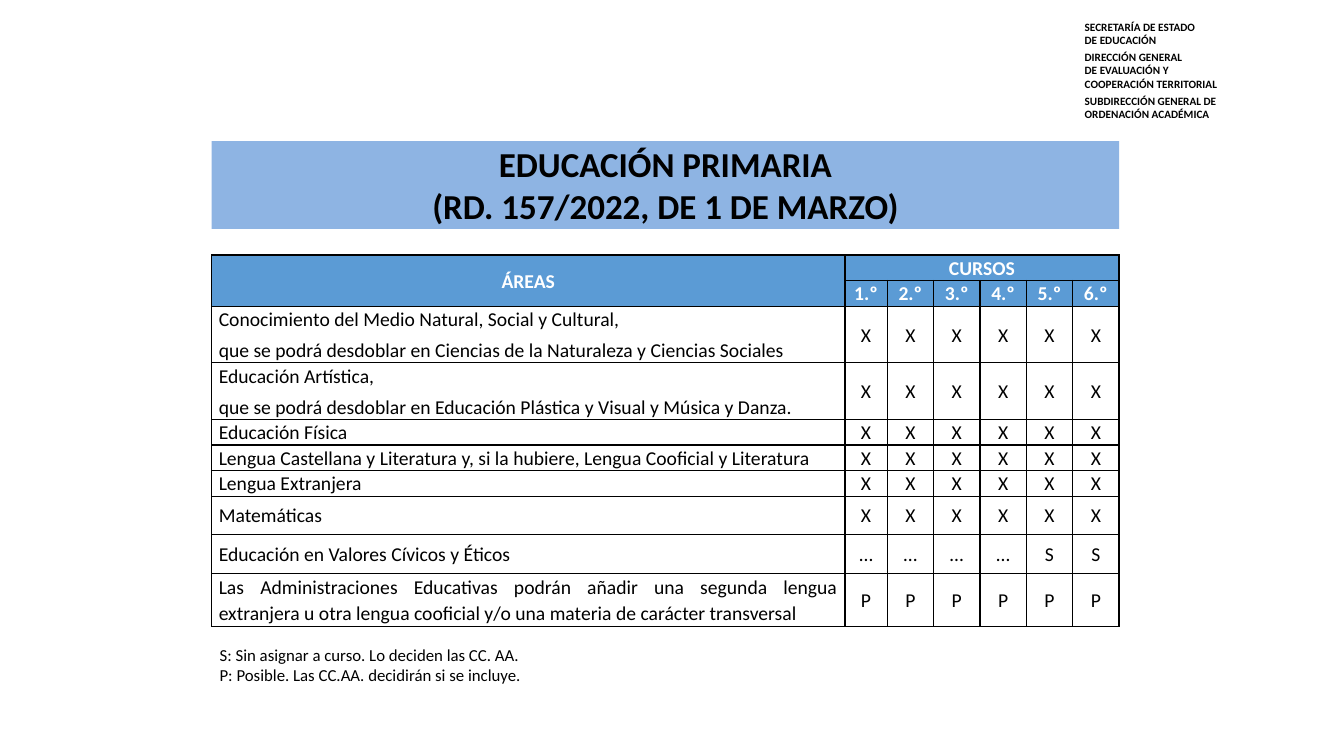
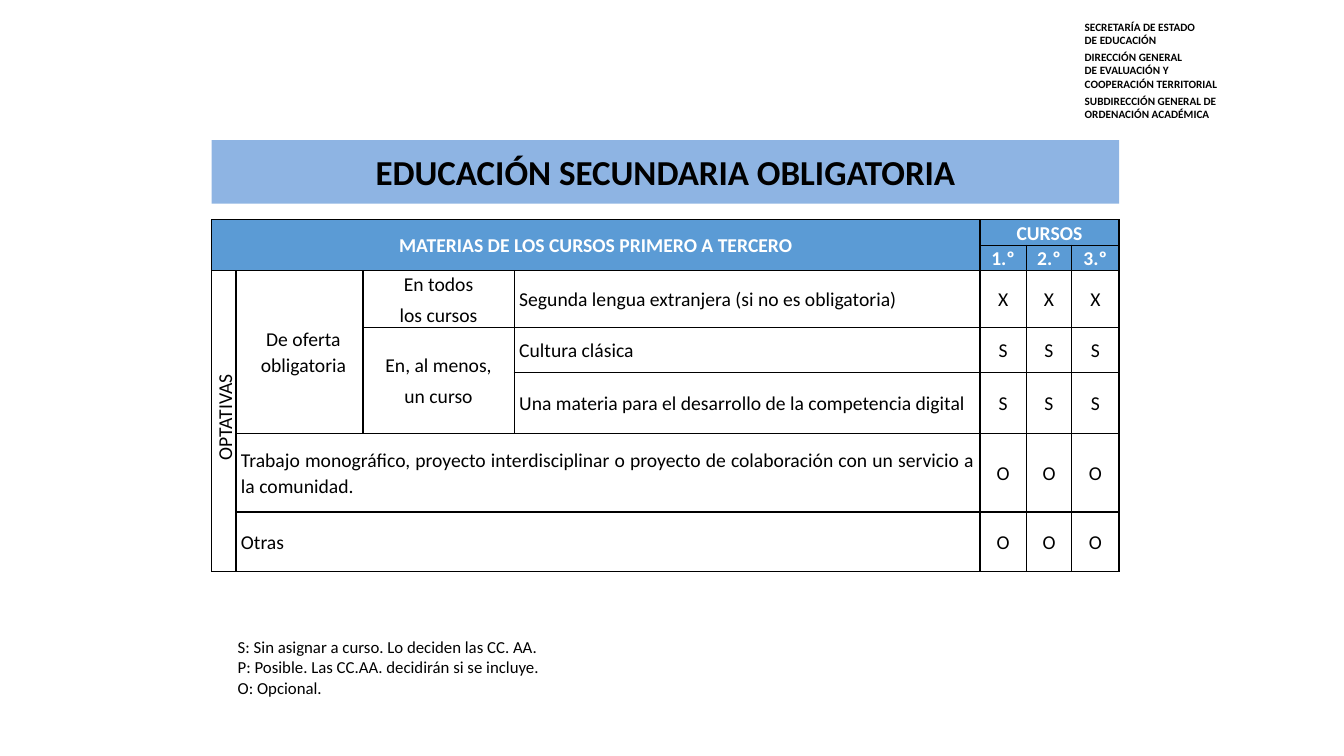
"""Build two slides on the areas and subjects of compulsory schooling."""
from dataclasses import dataclass
from typing import NamedTuple

from lxml import etree
from pptx import Presentation
from pptx import util as u
from pptx.dml import color
from pptx.enum import text
from pptx.oxml import ns

CENTER = text.PP_ALIGN.CENTER
JUSTIFY = text.PP_ALIGN.JUSTIFY
LEFT = text.PP_ALIGN.LEFT


@dataclass(frozen=True)
class Theme:
    font: str = "Calibri"
    ink: str = "000000"
    paper: str = "FFFFFF"
    band: str = "8EB4E3"
    header: str = "5B9BD5"
    title_size: float = 25
    table_size: float = 14
    legend_size: float = 12
    office_size: float = 8
    border_width: float = 1
    line_spacing: float = 1.07
    space_after: float = 4
    office_gap: float = 2.4


THEME = Theme()
TABLE_LEFT, TABLE_WIDTH = 2.1, 9
HEADER_ROWS = 2
OFFICES = (
    ("SECRETARÍA DE ESTADO", "DE EDUCACIÓN"),
    ("DIRECCIÓN GENERAL", "DE EVALUACIÓN Y", "COOPERACIÓN TERRITORIAL"),
    ("SUBDIRECCIÓN GENERAL DE ORDENACIÓN ACADÉMICA",),
)
LEGEND = (
    "S: Sin asignar a curso. Lo deciden las CC. AA.",
    "P: Posible. Las CC.AA. decidirán si se incluye.",
    "O: Opcional.",
)


class Box(NamedTuple):
    left: float
    top: float
    width: float
    height: float


class Label(NamedTuple):
    row: int
    column: int
    words: str
    rows: int = 1
    columns: int = 1
    align: text.PP_ALIGN = JUSTIFY
    indent: float = 0
    vertical: bool = False


@dataclass(frozen=True)
class Stage:
    title: str
    title_box: Box
    table_top: float
    widths: tuple[float, ...]
    heights: tuple[float, ...]
    inset: float
    heading: str
    labels: tuple[Label, ...]
    marks: tuple[str, ...]
    legend: tuple[str, ...]
    legend_box: Box


PRIMARY_AREAS = (
    "Conocimiento del Medio Natural, Social y Cultural,\n"
    "que se podrá desdoblar en Ciencias de la Naturaleza y Ciencias Sociales",
    "Educación Artística,\n"
    "que se podrá desdoblar en Educación Plástica y Visual y Música y Danza.",
    "Educación Física",
    "Lengua Castellana y Literatura y, si la hubiere, Lengua Cooficial y Literatura",
    "Lengua Extranjera",
    "Matemáticas",
    "Educación en Valores Cívicos y Éticos",
    "Las Administraciones Educativas podrán añadir una segunda lengua extranjera "
    "u otra lengua cooficial y/o una materia de carácter transversal",
)
STAGES = (
    Stage(
        title="EDUCACIÓN PRIMARIA\v(RD. 157/2022, DE 1 DE MARZO)",
        title_box=Box(TABLE_LEFT, 1.4, TABLE_WIDTH, 0.87),
        table_top=2.53,
        widths=(6.28, 0.42) + (0.46,) * 5,
        heights=(0.25, 0.25, 0.56, 0.56, 0.25, 0.25, 0.25, 0.38, 0.39, 0.52),
        inset=0.07,
        heading="ÁREAS",
        labels=tuple(Label(row, 0, area) for row, area in enumerate(PRIMARY_AREAS, HEADER_ROWS)),
        marks=("XXXXXX",) * 6 + ("…………SS", "PPPPPP"),
        legend=LEGEND[:2],
        legend_box=Box(2.08, 6.35, 5, 0.5),
    ),
    Stage(
        title="EDUCACIÓN SECUNDARIA OBLIGATORIA",
        title_box=Box(TABLE_LEFT, 1.39, TABLE_WIDTH, 0.63),
        table_top=2.18,
        widths=(0.24, 1.26, 1.5, 4.62, 0.46, 0.45, 0.47),
        heights=(0.25, 0.25, 0.56, 0.45, 0.6, 0.78, 0.59),
        inset=0.05,
        heading="MATERIAS DE LOS CURSOS PRIMERO A TERCERO",
        labels=(
            Label(2, 0, "OPTATIVAS", rows=5, align=CENTER, indent=0.08, vertical=True),
            Label(2, 1, "De oferta obligatoria", rows=3, align=CENTER, indent=0.08),
            Label(2, 2, "En todos\nlos cursos", align=CENTER),
            Label(2, 3, "Segunda lengua extranjera (si no es obligatoria)"),
            Label(3, 2, "En, al menos,\nun curso", rows=2, align=CENTER),
            Label(3, 3, "Cultura clásica"),
            Label(4, 3, "Una materia para el desarrollo de la competencia digital"),
            Label(5, 1, "Trabajo monográfico, proyecto interdisciplinar o proyecto de "
                  "colaboración con un servicio a la comunidad.", columns=3),
            Label(6, 1, "Otras", columns=3),
        ),
        marks=("XXX", "SSS", "SSS", "OOO", "OOO"),
        legend=LEGEND,
        legend_box=Box(2.26, 6.27, 3.26, 0.71),
    ),
)


def style_text(frame, size: float, align: text.PP_ALIGN, ink: str = THEME.ink, bold: bool = False) -> None:
    """Align every paragraph and format its runs."""
    for paragraph in frame.paragraphs:
        paragraph.alignment = align
        for run in paragraph.runs:
            run.font.name = THEME.font
            run.font.size = u.Pt(size)
            run.font.bold = bold
            run.font.color.rgb = color.RGBColor.from_string(ink)


def add_text(slide, box: Box, lines: tuple[str, ...], size: float, bold: bool = False):
    """Add a wrapped text box with one paragraph per line."""
    shape = slide.shapes.add_textbox(*map(u.Inches, box))
    frame = shape.text_frame
    frame.word_wrap = True
    frame.text = "\n".join(lines)
    style_text(frame, size, LEFT, bold=bold)
    return shape


def add_offices(slide, layout) -> None:
    """Place the names of the offices on the shared layout."""
    lines = tuple(line for office in OFFICES for line in office)
    shape = add_text(slide, Box(10.66, 0.15, 2.04, 1.11), lines, THEME.office_size, bold=True)
    first = 0
    for office in OFFICES[:-1]:
        first += len(office)
        shape.text_frame.paragraphs[first].space_before = u.Pt(THEME.office_gap)
    layout.shapes.element.append(shape.element)


def format_title(slide, stage: Stage) -> None:
    """Turn the title placeholder into the coloured band."""
    shape = slide.shapes.title
    shape.left, shape.top, shape.width, shape.height = map(u.Inches, stage.title_box)
    shape.fill.solid()
    shape.fill.fore_color.rgb = color.RGBColor.from_string(THEME.band)
    frame = shape.text_frame
    frame.text = stage.title
    frame.word_wrap = True
    frame.auto_size = text.MSO_AUTO_SIZE.NONE
    frame.vertical_anchor = text.MSO_ANCHOR.MIDDLE
    style_text(frame, THEME.title_size, CENTER, bold=True)


def format_cell(cell, inset: float, header: bool) -> None:
    """Set the borders, fill and margins of a cell."""
    properties = cell._tc.get_or_add_tcPr()
    for side in ("a:lnL", "a:lnR", "a:lnT", "a:lnB"):
        line = etree.SubElement(properties, ns.qn(side), w=str(u.Pt(THEME.border_width)))
        fill = etree.SubElement(line, ns.qn("a:solidFill"))
        etree.SubElement(fill, ns.qn("a:srgbClr"), val=THEME.ink)
    if header:
        cell.fill.solid()
        cell.fill.fore_color.rgb = color.RGBColor.from_string(THEME.header)
    else:
        cell.fill.background()
    cell.margin_left = cell.margin_right = u.Inches(inset)
    cell.margin_top = cell.margin_bottom = 0
    cell.vertical_anchor = text.MSO_ANCHOR.MIDDLE


def write_label(table, label: Label) -> None:
    """Merge the cells of a label and write its words."""
    cell = table.cell(label.row, label.column)
    if label.rows * label.columns > 1:
        cell.merge(table.cell(label.row + label.rows - 1, label.column + label.columns - 1))
    cell.text_frame.text = label.words
    header = label.row < HEADER_ROWS
    style_text(cell.text_frame, THEME.table_size, label.align, THEME.paper if header else THEME.ink, header)
    for paragraph in cell.text_frame.paragraphs:
        paragraph.line_spacing = THEME.line_spacing
        paragraph.space_after = u.Pt(THEME.space_after)
        if label.indent:
            paragraph._p.get_or_add_pPr().set("marL", str(u.Inches(label.indent)))
    if label.vertical:
        cell._tc.get_or_add_tcPr().set("vert", "vert270")


def table_labels(stage: Stage) -> list[Label]:
    """List the headings, row labels and course marks of a stage."""
    courses = len(stage.marks[0])
    first = len(stage.widths) - courses
    labels = [
        Label(0, 0, stage.heading, rows=HEADER_ROWS, columns=first, align=CENTER),
        Label(0, first, "CURSOS", columns=courses, align=CENTER),
    ]
    labels += [Label(1, first + course, f"{course + 1}.º", align=CENTER) for course in range(courses)]
    labels += stage.labels
    labels += [
        Label(row, column, mark, align=CENTER)
        for row, marks in enumerate(stage.marks, HEADER_ROWS)
        for column, mark in enumerate(marks, first)
    ]
    return labels


def add_stage_table(slide, stage: Stage) -> None:
    """Draw the table of subjects and courses."""
    box = Box(TABLE_LEFT, stage.table_top, TABLE_WIDTH, sum(stage.heights))
    table = slide.shapes.add_table(len(stage.heights), len(stage.widths), *map(u.Inches, box)).table
    table.first_row = table.horz_banding = False
    for column, width in zip(table.columns, stage.widths):
        column.width = u.Inches(width)
    for index, (row, height) in enumerate(zip(table.rows, stage.heights)):
        row.height = u.Inches(height)
        for cell in row.cells:
            format_cell(cell, stage.inset, index < HEADER_ROWS)
    for label in table_labels(stage):
        write_label(table, label)


def main() -> None:
    """Build and save the presentation."""
    presentation = Presentation()
    presentation.slide_width, presentation.slide_height = u.Inches(13.33), u.Inches(7.5)
    layout = presentation.slide_layouts.get_by_name("Title Only")
    for index, stage in enumerate(STAGES):
        slide = presentation.slides.add_slide(layout)
        if index == 0:
            add_offices(slide, layout)
        format_title(slide, stage)
        add_stage_table(slide, stage)
        add_text(slide, stage.legend_box, stage.legend, THEME.legend_size)
    presentation.save("out.pptx")


if __name__ == "__main__":
    main()
